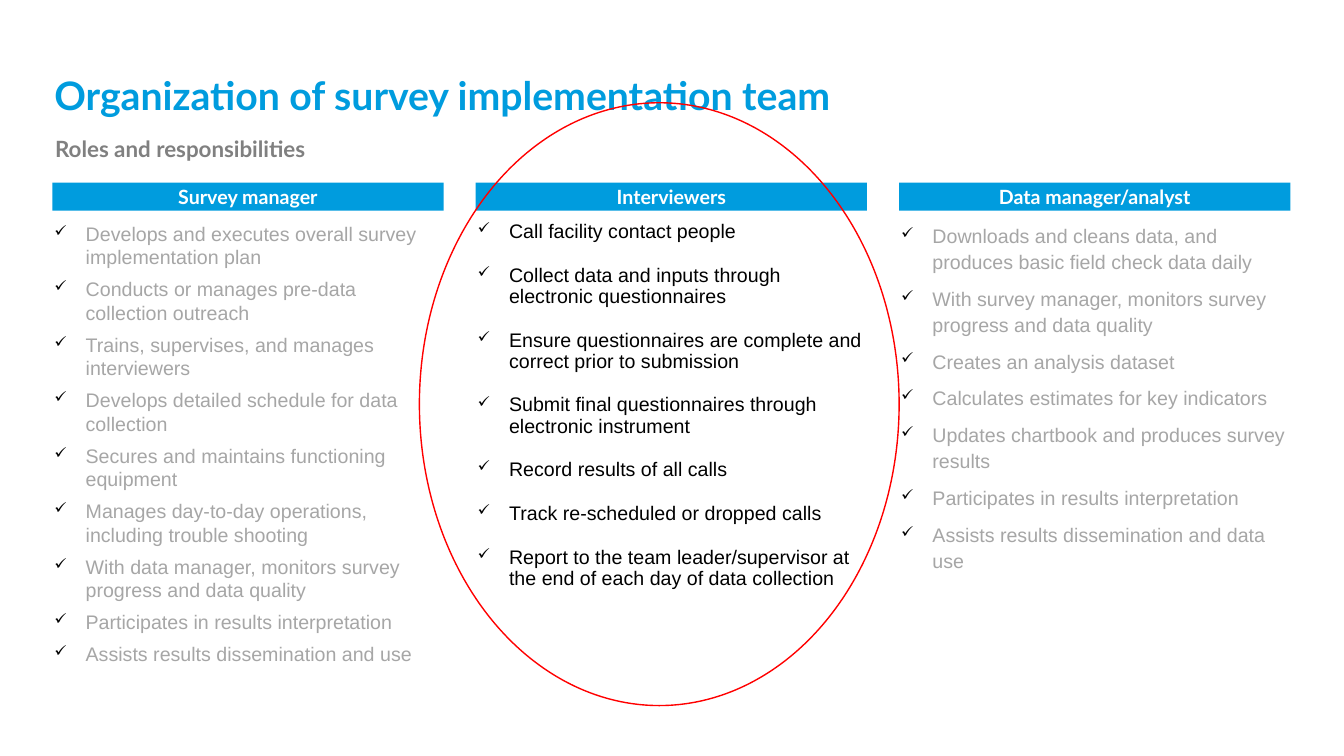
from dataclasses import dataclass

from lxml.etree import SubElement
from pptx import Presentation
from pptx.dml.color import RGBColor
from pptx.enum.shapes import MSO_SHAPE
from pptx.enum.text import MSO_ANCHOR, MSO_AUTO_SIZE, PP_ALIGN
from pptx.oxml.ns import qn
from pptx.util import Cm, Pt

BLUE = RGBColor(0x00, 0x9C, 0xDE)
GREY = RGBColor(0x80, 0x80, 0x80)
LIGHT_GREY = RGBColor(0xA6, 0xA6, 0xA6)
BLACK = RGBColor(0, 0, 0)
WHITE = RGBColor(0xFF, 0xFF, 0xFF)
RED = RGBColor(0xFF, 0, 0)

LEFT, COLUMN_WIDTH, COLUMN_PITCH = 1.32, 9.86, 10.67


@dataclass
class Role:
    name: str
    duties: list[str]
    color: RGBColor
    line_spacing: float
    before: float
    after: float


ROLES = [
    Role("Survey manager", [
        "Develops and executes overall survey implementation plan",
        "Conducts or manages pre-data collection outreach",
        "Trains, supervises, and manages interviewers",
        "Develops detailed schedule for data collection",
        "Secures and maintains functioning equipment",
        "Manages day-to-day operations, including trouble shooting",
        "With data manager, monitors survey progress and data quality",
        "Participates in results interpretation",
        "Assists results dissemination and use",
    ], LIGHT_GREY, 1.0, 6, 0),
    Role("Interviewers", [
        "Call facility contact people",
        "Collect data and inputs through electronic questionnaires",
        "Ensure questionnaires are complete and correct prior to submission",
        "Submit final questionnaires through electronic instrument",
        "Record results of all calls",
        "Track re-scheduled or dropped calls",
        "Report to the team leader/supervisor at the end of each day of data collection",
    ], BLACK, 0.9, 10, 6),
    Role("Data manager/analyst", [
        "Downloads and cleans data, and produces basic field check data daily",
        "With survey manager, monitors survey progress and data quality",
        "Creates an analysis dataset",
        "Calculates estimates for key indicators",
        "Updates chartbook and produces survey results",
        "Participates in results interpretation",
        "Assists results dissemination and data use",
    ], LIGHT_GREY, 1.1, 1.8, 6),
]


def add_check_bullet(p) -> None:
    pPr = p._p.get_or_add_pPr()
    pPr.set("marL", str(Cm(0.79)))
    pPr.set("indent", str(-Cm(0.79)))
    color = SubElement(pPr, qn("a:buClr"))
    SubElement(color, qn("a:srgbClr"), val=str(BLACK))
    SubElement(pPr, qn("a:buSzPct"), val="80000")
    SubElement(pPr, qn("a:buChar"), char="✓")


def write(sp, lines: list[str], *, size: float, color: RGBColor, font: str = "Lato",
          bold: bool = True, align=PP_ALIGN.LEFT, anchor=MSO_ANCHOR.MIDDLE,
          line_spacing: float = 1.0, before: float = 0, after: float = 0,
          bullets: bool = False, side: float = 0.05, right: float = 0.05,
          edge: float = 0) -> None:
    """Fill a shape with one formatted paragraph per line; insets are in cm."""
    tf = sp.text_frame
    tf.word_wrap = True
    tf.auto_size = MSO_AUTO_SIZE.NONE
    tf.vertical_anchor = anchor
    tf.margin_left, tf.margin_right = Cm(side), Cm(right)
    tf.margin_top = tf.margin_bottom = Cm(edge)
    for i, line in enumerate(lines):
        p = tf.add_paragraph() if i else tf.paragraphs[0]
        if bullets:
            add_check_bullet(p)
        p.alignment = align
        p.line_spacing = line_spacing
        p.space_before = Pt(before if i else 0)
        p.space_after = Pt(after)
        r = p.add_run()
        r.text = line
        r.font.name, r.font.size, r.font.bold = font, Pt(size), bold
        r.font.color.rgb = color


def add_role(s, role: Role, left: float) -> None:
    duties = s.shapes.add_textbox(Cm(left), Cm(5.59), Cm(COLUMN_WIDTH), Cm(10.77))
    write(duties, role.duties, size=14, color=role.color, font="Arial", bold=False,
          anchor=MSO_ANCHOR.TOP, line_spacing=role.line_spacing,
          before=role.before, after=role.after, bullets=True)
    header = s.shapes.add_shape(MSO_SHAPE.RECTANGLE, Cm(left), Cm(4.6),
                                Cm(COLUMN_WIDTH), Cm(0.71))
    header.shadow.inherit = False
    header.fill.solid()
    header.fill.fore_color.rgb = BLUE
    header.line.fill.background()
    write(header, [role.name], size=14, color=WHITE, align=PP_ALIGN.CENTER,
          side=0.2, right=0.2, edge=0.05)


def main() -> None:
    prs = Presentation()
    prs.slide_width, prs.slide_height = Cm(33.87), Cm(19.05)
    s = prs.slides.add_slide(prs.slide_layouts[5])

    title = s.shapes.title
    title.left, title.top, title.width, title.height = Cm(LEFT), Cm(1), Cm(22.65), Cm(2)
    write(title, ["Organization of survey implementation team"], size=28, color=BLUE,
          anchor=MSO_ANCHOR.BOTTOM, line_spacing=0.9, right=1)

    subtitle = s.shapes.add_textbox(Cm(1.34), Cm(3.3), Cm(22.65), Cm(0.82))
    write(subtitle, ["Roles and responsibilities"], size=16, color=GREY, line_spacing=1.1)

    for i, role in enumerate(ROLES):
        add_role(s, role, LEFT + i * COLUMN_PITCH)

    highlight = s.shapes.add_shape(MSO_SHAPE.OVAL, Cm(10.57), Cm(2.59), Cm(12.09), Cm(15.19))
    highlight.shadow.inherit = False
    highlight.fill.background()
    highlight.line.color.rgb = RED
    highlight.line.width = Pt(1)

    prs.save("out.pptx")


if __name__ == "__main__":
    main()
